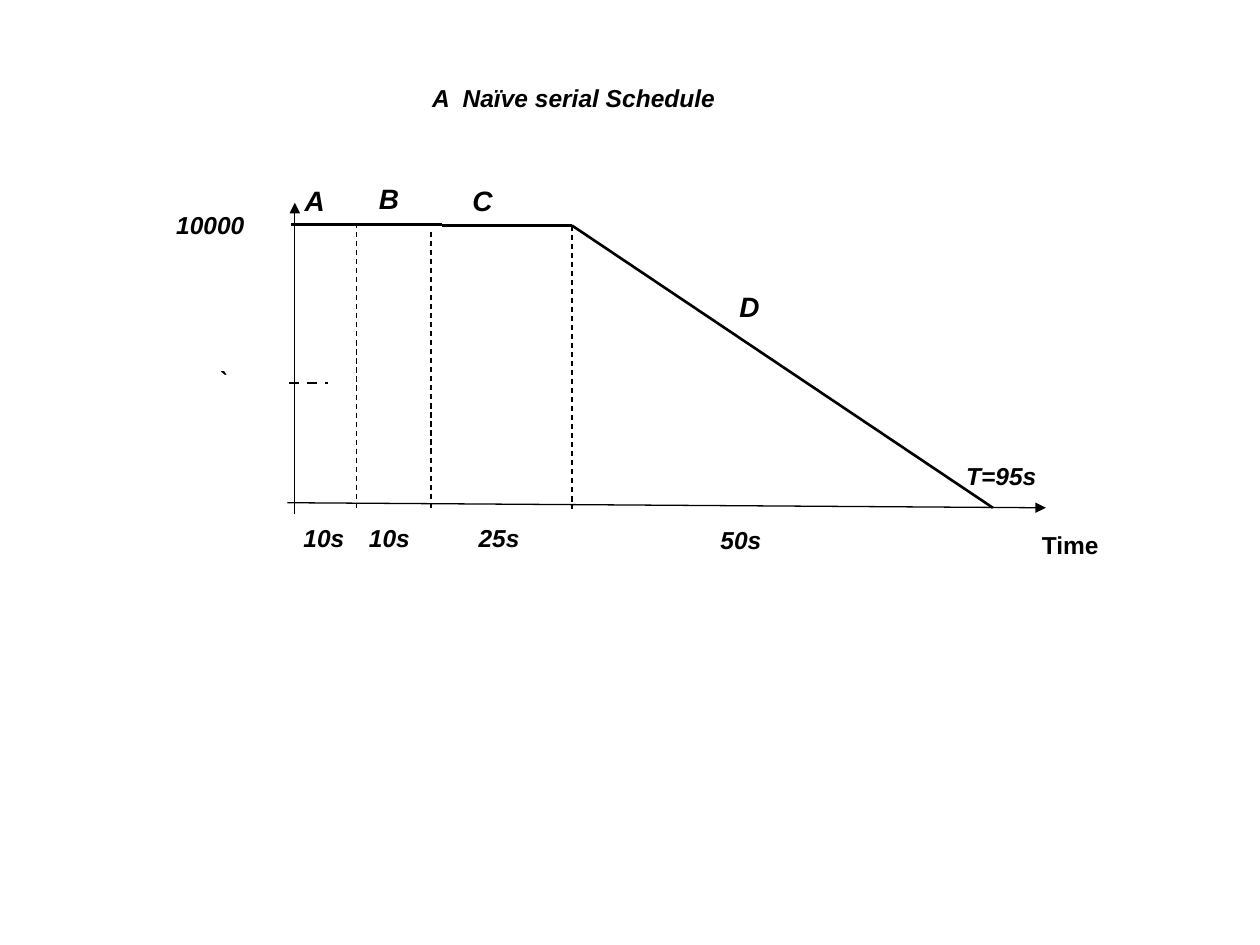
from dataclasses import dataclass

from lxml.etree import SubElement
from pptx import Presentation
from pptx.dml.color import RGBColor
from pptx.enum.dml import MSO_LINE
from pptx.enum.shapes import MSO_CONNECTOR
from pptx.enum.text import MSO_ANCHOR, MSO_AUTO_SIZE, PP_ALIGN
from pptx.oxml.ns import qn
from pptx.util import Inches, Pt


@dataclass(frozen=True)
class Theme:
    ink: RGBColor = RGBColor(0, 0, 0)
    font: str = "Arial"
    label_size: int = 14
    job_size: int = 16
    thin: float = 0.75
    thick: float = 1.5


THEME = Theme()
TITLE_ONLY = 5
LABEL_WIDTH = 0.66
LEVEL = 1.78
JOBS = [
    ("A", 2.32, 1.41),
    ("B", 2.91, 1.39),
    ("C", 3.65, 1.41),
    ("D", 5.77, 2.25),
]
DURATIONS = [
    ("10s", 2.31, 4.1),
    ("10s", 2.83, 4.1),
    ("25s", 3.7, 4.1),
    ("50s", 5.62, 4.12),
]
SCHEDULE = [
    ((2.31, LEVEL), (2.91, LEVEL)),
    ((2.91, LEVEL), (3.51, LEVEL)),
    ((3.51, 1.79), (4.54, 1.79)),
    ((4.54, 1.79), (7.88, 4.03)),
]
BOUNDARIES = [(2.83, 1.77, 4.03), (3.42, 1.84, 4.03), (4.54, 1.79, 4.04)]
AXES = [((2.28, 3.99), (8.3, 4.03)), ((2.34, 4.08), (2.34, 1.61))]


def apply(target, values):
    for attribute, value in values.items():
        setattr(target, attribute, value)


def write(holder, wording, size, italic=True, wrap=True):
    frame = holder.text_frame
    frame.text = wording
    apply(frame, {
        "word_wrap": wrap,
        "auto_size": MSO_AUTO_SIZE.NONE,
        "vertical_anchor": MSO_ANCHOR.TOP,
    })
    paragraph = frame.paragraphs[0]
    paragraph.alignment = PP_ALIGN.LEFT
    font = paragraph.runs[0].font
    apply(font, {
        "name": THEME.font, "size": Pt(size), "bold": True, "italic": italic,
    })
    font.color.rgb = THEME.ink


def add_title(slide, wording, left, top, width, height):
    title = slide.shapes.title
    apply(title, {
        "left": Inches(left), "top": Inches(top),
        "width": Inches(width), "height": Inches(height),
    })
    write(title, wording, THEME.label_size)


def add_label(slide, wording, left, top, width=LABEL_WIDTH,
              size=THEME.label_size, italic=True, wrap=True):
    height = 0.37 if size == THEME.job_size else 0.34
    label = slide.shapes.add_textbox(
        Inches(left), Inches(top), Inches(width), Inches(height))
    write(label, wording, size, italic, wrap)


def add_line(slide, start, end, weight, dashed=False, arrow=False):
    ends = [Inches(length) for length in (*start, *end)]
    connector = slide.shapes.add_connector(MSO_CONNECTOR.STRAIGHT, *ends)
    connector.line.color.rgb = THEME.ink
    connector.line.width = Pt(weight)
    if dashed:
        connector.line.dash_style = MSO_LINE.DASH
    if arrow:
        SubElement(connector.line._get_or_add_ln(), qn("a:tailEnd"),
                   type="triangle")
    SubElement(connector._element.spPr, qn("a:effectLst"))


def main():
    deck = Presentation()
    apply(deck, {"slide_width": Inches(10), "slide_height": Inches(7.5)})
    slide = deck.slides.add_slide(deck.slide_layouts[TITLE_ONLY])

    add_title(slide, "A  Naïve serial Schedule", 3.33, 0.61, 2.77, 0.57)
    for start, end in AXES:
        add_line(slide, start, end, THEME.thin, arrow=True)
    for start, end in SCHEDULE:
        add_line(slide, start, end, THEME.thick)
    add_line(slide, (2.29, 3.04), (2.6, 3.04), THEME.thick, dashed=True)
    for x, top, bottom in BOUNDARIES:
        add_line(slide, (x, top), (x, bottom), THEME.thin, dashed=True)

    for job, left, top in JOBS:
        add_label(slide, job, left, top, size=THEME.job_size)
    for duration, left, top in DURATIONS:
        add_label(slide, duration, left, top)
    add_label(slide, "10000", 1.3, 1.62, width=1)
    add_label(slide, "`", 1.63, 2.85)
    add_label(slide, "T=95s", 7.57, 3.61, width=0.76, wrap=False)
    add_label(slide, "Time", 8.17, 4.16, width=0.65, italic=False, wrap=False)

    deck.save("out.pptx")


if __name__ == "__main__":
    main()
